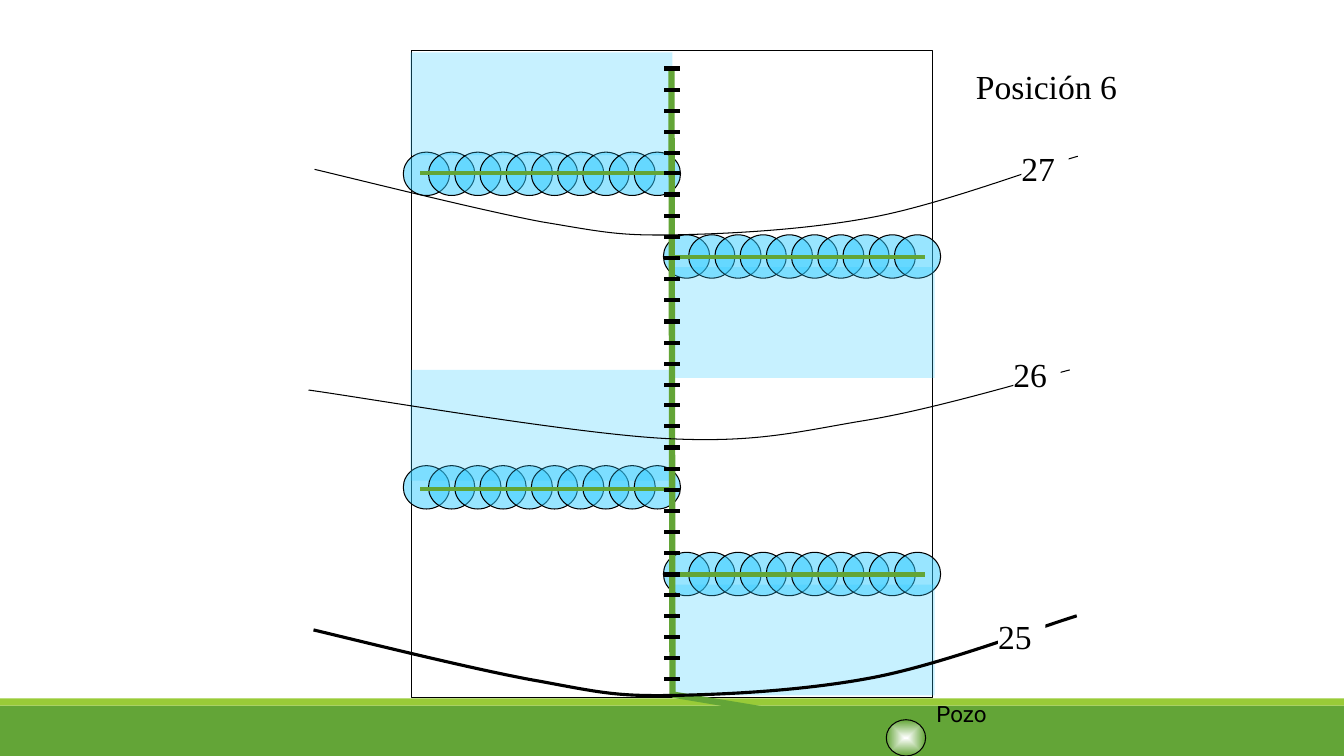
from lxml import etree
from pptx import Presentation
from pptx import util as u
from pptx.dml import color
from pptx.enum import shapes, text
from pptx.oxml import ns, parse_xml

PX = 9144  # 100 px to the inch
COLORS = {"green": "63A537", "lime": "99CB38", "water": "33CCFF",
          "black": "000000", "white": "FFFFFF"}
SERIF, SANS = "Times New Roman", "Roboto"
OVAL, RECT = shapes.MSO_SHAPE.OVAL, shapes.MSO_SHAPE.RECTANGLE

TICKS, TICK_STEP = 30, 20.9
CIRCLES, CIRCLE_STEP = 10, 25.44
# circle left, circle top, pipe left, pipe y
SPRINKLER_ROWS = [(658, 548, 667, 570), (400, 462, 417, 485),
                  (658, 233, 667, 255), (400, 151, 417, 172)]
# left, top, height
IRRIGATED_AREAS = [(407, 367, 110), (407, 52, 102), (667, 265, 110), (667, 580, 110)]
# line width, then the start point and three Bézier points per segment
CONTOURS = [
    (2.25, [(311, 625), (349, 634), (477, 666), (536, 676), (595, 687), (612, 691),
            (667, 690), (722, 689), (800, 685), (867, 672), (934, 659), (1026, 624), (1068, 611)]),
    (0.75, [(306, 387), (364, 395), (567, 430), (659, 435), (751, 440), (792, 428),
            (859, 417), (926, 406), (1019, 378), (1061, 367)]),
    (0.75, [(312, 168), (350, 177), (478, 209), (537, 220), (597, 230), (613, 234),
            (668, 233), (723, 232), (801, 228), (868, 215), (935, 202), (1027, 167), (1069, 155)]),
]
CONTOUR_LABELS = [("25", 990, 611), ("26", 1005, 351), ("27", 1013, 147)]


def px(length):
    return u.Emu(round(length) * PX)


def rgb(name):
    return color.RGBColor.from_string(COLORS[name])


def write(shape, content, size=24, font=SERIF, ink="black", inset=(10, 5)):
    frame = shape.text_frame
    frame.word_wrap = True
    frame.auto_size = text.MSO_AUTO_SIZE.SHAPE_TO_FIT_TEXT
    frame.vertical_anchor = text.MSO_ANCHOR.TOP
    frame.margin_left = frame.margin_right = px(inset[0])
    frame.margin_top = frame.margin_bottom = px(inset[1])
    paragraph = frame.paragraphs[0]
    paragraph.alignment = text.PP_ALIGN.LEFT
    run = paragraph.add_run()
    run.text = content
    run.font.size, run.font.name = u.Pt(size), font
    run.font.color.rgb = rgb(ink)


class Sketch:
    """Draws in px on the slide, or in the group opened last."""

    def __init__(self, slide):
        self.slide = slide
        self.canvas = slide.shapes

    def open_group(self):
        self.canvas = self.slide.shapes.add_group_shape().shapes

    def close_group(self):
        self.canvas = self.slide.shapes

    def outline(self, shape, ink, weight):
        if ink:
            shape.line.color.rgb = rgb(ink)
            shape.line.width = u.Pt(weight)
        else:
            shape.line.fill.background()

    def figure(self, kind, left, top, width, height, fill=None, alpha=None, ink=None):
        shape = self.canvas.add_shape(kind, px(left), px(top), px(width), px(height))
        shape.shadow.inherit = False
        if fill:
            shape.fill.solid()
            shape.fill.fore_color.rgb = rgb(fill)
        else:
            shape.fill.background()
        if alpha:
            tint = shape._element.spPr.find(".//" + ns.qn("a:srgbClr"))
            etree.SubElement(tint, ns.qn("a:alpha"), val=str(alpha * 1000))
        self.outline(shape, ink, 0.75)
        return shape

    def glow(self, shape, inner, outer):
        """Fill a shape with a gradient from its centre to its edge."""
        shape.fill.gradient()
        for stop, name in zip(shape.fill.gradient_stops, (inner, outer)):
            stop.color.rgb = rgb(name)
        linear = shape._element.spPr.find(".//" + ns.qn("a:lin"))
        linear.getparent().replace(linear, parse_xml(
            f'<a:path {ns.nsdecls("a")} path="shape">'
            '<a:fillToRect l="50000" t="50000" r="50000" b="50000"/></a:path>'))

    def line(self, x1, y1, x2, y2, ink, weight):
        connector = self.canvas.add_connector(
            shapes.MSO_CONNECTOR.STRAIGHT, px(x1), px(y1), px(x2), px(y2))
        self.outline(connector, ink, weight)
        etree.SubElement(connector._element.spPr, ns.qn("a:effectLst"))

    def curve(self, points, ink, weight):
        """Draw a freeform and turn every three segments into one Bézier curve."""
        builder = self.canvas.build_freeform(*points[0], scale=PX)
        builder.add_line_segments(points[1:], close=False)
        shape = builder.convert_to_shape()
        shape.shadow.inherit = False
        shape.fill.background()
        self.outline(shape, ink, weight)
        steps = shape._element.spPr.findall(".//" + ns.qn("a:lnTo"))
        for first in range(0, len(steps), 3):
            bezier = etree.SubElement(steps[first].getparent(), ns.qn("a:cubicBezTo"))
            for step in steps[first:first + 3]:
                bezier.append(step[0])
                step.getparent().remove(step)

    def title(self, content, left, top, width, height):
        heading = self.slide.shapes.title
        heading.left, heading.top = px(left), px(top)
        heading.width, heading.height = px(width), px(height)
        write(heading, content)

    def caption(self, content, left, top, width, height, **style):
        box = self.canvas.add_textbox(px(left), px(top), px(width), px(height))
        write(box, content, **style)


def main():
    deck = Presentation()
    deck.slide_width, deck.slide_height = px(1333), px(750)
    sketch = Sketch(deck.slides.add_slide(deck.slide_layouts[5]))

    sketch.figure(RECT, 0, 700, 1333, 50, fill="green")
    sketch.figure(RECT, 0, 693, 1333, 7, fill="lime")
    sketch.figure(RECT, 408, 50, 517, 642, ink="black")

    for left, top, pipe_left, pipe_y in SPRINKLER_ROWS:
        sketch.open_group()
        for i in range(CIRCLES):
            sketch.figure(OVAL, left + i * CIRCLE_STEP, top, 46, 43,
                          fill="water", alpha=50, ink="black")
        sketch.line(pipe_left, pipe_y, pipe_left + 250, pipe_y, "green", 3)
    sketch.close_group()

    for left, top, height in IRRIGATED_AREAS:
        sketch.figure(RECT, left, top, 260, height, fill="water", alpha=27)
    sketch.title("Posición 6", 958, 60, 173, 50)

    sketch.open_group()
    sketch.line(667, 691, 666, 68, "green", 4.5)
    sketch.line(667, 689, 883, 725, "green", 4.5)
    for i in range(TICKS):
        tick_y = 68 + i * TICK_STEP
        sketch.line(659, tick_y, 674, tick_y, "black", 3)

    sketch.open_group()
    well = sketch.figure(OVAL, 879, 714, 39, 36, ink="black")
    sketch.glow(well, "white", "green")
    sketch.caption("Pozo", 919, 690, 110, 37, size=16, font=SANS)
    for weight, points in CONTOURS:
        sketch.curve(points, "black", weight)
    for level, left, top in CONTOUR_LABELS:
        write(sketch.figure(RECT, left, top, 47, 40, fill="white"), level, inset=(0, 0))

    deck.save("out.pptx")


if __name__ == "__main__":
    main()
